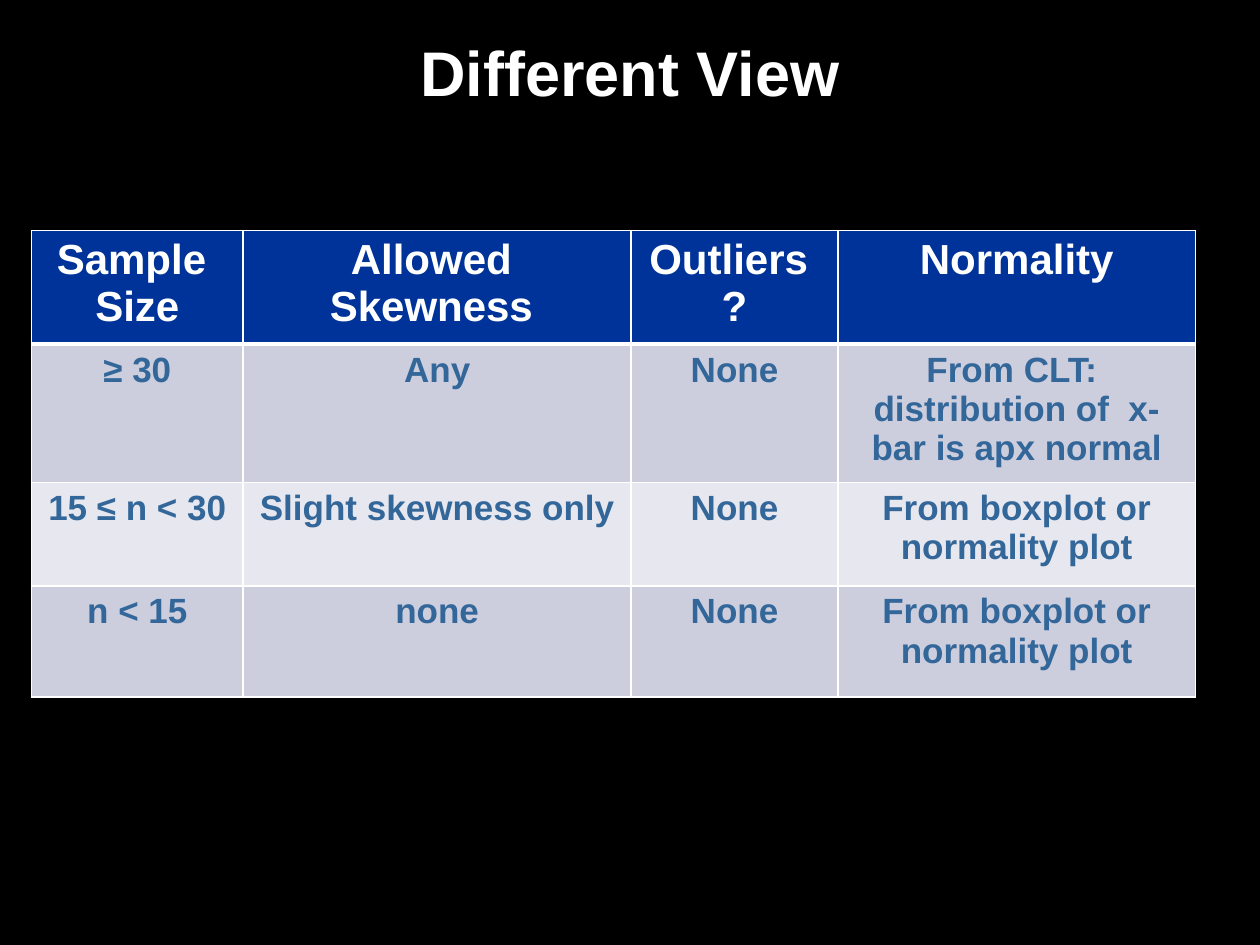
from lxml import etree
from pptx import Presentation
from pptx.dml.color import RGBColor
from pptx.enum.text import MSO_ANCHOR, PP_ALIGN
from pptx.oxml.ns import qn
from pptx.util import Inches, Pt

CENTER = PP_ALIGN.CENTER
MIDDLE = MSO_ANCHOR.MIDDLE
WHITE, NAVY, STEEL = "FFFFFF", "003399", "336699"
BANDS = ["CCCEDE", "E7E8EF"]


def color(hex_code):
    return RGBColor.from_string(hex_code)


def write_lines(frame, lines, size, hex_code):
    """Write one bold, centred paragraph per line."""
    for i, line in enumerate(lines):
        paragraph = frame.add_paragraph() if i else frame.paragraphs[0]
        paragraph.alignment = CENTER
        run = paragraph.add_run()
        run.text = line
        run.font.name = "Arial"
        run.font.size = Pt(size)
        run.font.bold = True
        run.font.color.rgb = color(hex_code)


prs = Presentation()
prs.slide_width, prs.slide_height = Inches(10), Inches(7.5)
slide = prs.slides.add_slide(prs.slide_layouts[6])
slide.background.fill.solid()
slide.background.fill.fore_color.rgb = color("000000")

# Title
title = slide.shapes.add_textbox(Inches(0.5), Inches(0.13), Inches(9), Inches(0.87))
title.text_frame.word_wrap = True
title.text_frame.vertical_anchor = MIDDLE
write_lines(title.text_frame, ["Different View"], 36, WHITE)

# Conditions by sample size; each cell is a list of paragraphs
rows = [
    [["Sample ", "Size"], ["Allowed ", "Skewness "], ["Outliers ", "?"], ["Normality"]],
    [["≥ 30"], ["Any"], ["None"], ["From CLT:  distribution of  x-bar is apx normal"]],
    [["15 ≤ n < 30"], ["Slight skewness only"], ["None"], ["From boxplot or normality plot"]],
    [["n < 15"], ["none"], ["None"], ["From boxplot or normality plot"]],
]
column_widths = [1.68, 3.08, 1.64, 2.84]
row_heights = [0.75, 1.08, 0.82, 0.88]

conditions = slide.shapes.add_table(
    len(rows), len(column_widths), Inches(0.25), Inches(1.83),
    Inches(sum(column_widths)), Inches(sum(row_heights))).table
for column, width in zip(conditions.columns, column_widths):
    column.width = Inches(width)

for r, row in enumerate(rows):
    conditions.rows[r].height = Inches(row_heights[r])
    for c, lines in enumerate(row):
        cell = conditions.cell(r, c)
        is_header = r == 0
        write_lines(cell.text_frame, lines, 24 if is_header else 20,
                    WHITE if is_header else STEEL)

        # White grid, with a heavy rule under the header
        properties = cell._tc.get_or_add_tcPr()
        for side in ("L", "R", "T", "B"):
            heavy = (r, side) in ((0, "B"), (1, "T"))
            border = etree.SubElement(properties, qn(f"a:ln{side}"),
                                      w=str(Pt(3 if heavy else 1)))
            border_fill = etree.SubElement(border, qn("a:solidFill"))
            etree.SubElement(border_fill, qn("a:srgbClr"), val=WHITE)

        cell.fill.solid()
        cell.fill.fore_color.rgb = color(NAVY if is_header else BANDS[(r - 1) % 2])

prs.save("out.pptx")
